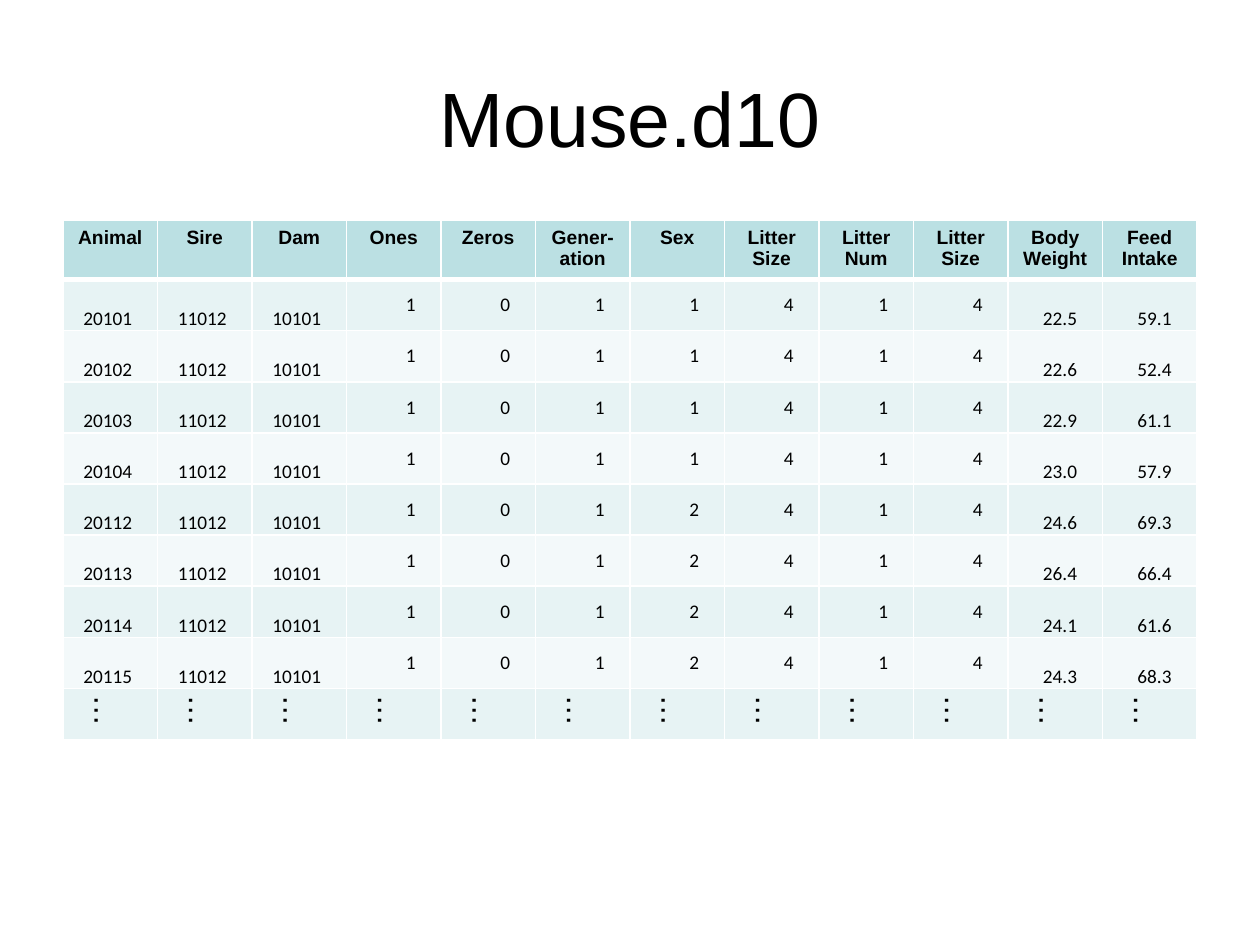
from dataclasses import dataclass

from lxml.etree import SubElement
from pptx import Presentation
from pptx.dml.color import RGBColor
from pptx.enum.text import MSO_ANCHOR, PP_ALIGN
from pptx.oxml.ns import qn
from pptx.util import Cm, Pt

COLORS = {"text": "000000", "header": "BBE0E3", "odd": "E7F3F4",
          "even": "F3F9FA", "border": "FFFFFF"}

HEADERS = ["Animal", "Sire", "Dam", "Ones", "Zeros", "Gener-\nation", "Sex",
           "Litter\nSize", "Litter\nNum", "Litter\nSize", "Body\nWeight", "Feed\nIntake"]
CODE_COLUMNS = range(3, 10)  # single-digit codes, centred vertically


@dataclass
class Mouse:
    animal: str
    sex: str
    weight: str
    intake: str

    def values(self) -> list[str]:
        return [self.animal, "11012", "10101", "1", "0", "1", self.sex,
                "4", "1", "4", self.weight, self.intake]


@dataclass
class TextStyle:
    size: int
    font: str = "Arial"
    bold: bool = False
    align: PP_ALIGN = PP_ALIGN.CENTER


MICE = [
    Mouse("20101", "1", "22.5", "59.1"),
    Mouse("20102", "1", "22.6", "52.4"),
    Mouse("20103", "1", "22.9", "61.1"),
    Mouse("20104", "1", "23.0", "57.9"),
    Mouse("20112", "2", "24.6", "69.3"),
    Mouse("20113", "2", "26.4", "66.4"),
    Mouse("20114", "2", "24.1", "61.6"),
    Mouse("20115", "2", "24.3", "68.3"),
]

TITLE = TextStyle(44)
HEADER = TextStyle(11, bold=True)
DATA = TextStyle(11, "Calibri", align=PP_ALIGN.RIGHT)
ELLIPSIS = TextStyle(18)
DATA_MARGINS = {"margin_left": Cm(0.03), "margin_right": Cm(0.51),
                "margin_top": 0, "margin_bottom": 0}


def write(frame, text: str, style: TextStyle) -> None:
    frame.text = text
    font_format = {"size": Pt(style.size), "name": style.font, "bold": style.bold}
    for paragraph in frame.paragraphs:
        paragraph.alignment = style.align
        for run in paragraph.runs:
            for name, value in font_format.items():
                setattr(run.font, name, value)
            run.font.color.rgb = RGBColor.from_string(COLORS["text"])


def paint(cell, fill: str, top: int = 1, bottom: int = 1) -> None:
    """Give a cell its white borders (points) and its fill."""
    properties = cell._tc.get_or_add_tcPr()
    for side, points in {"L": 1, "R": 1, "T": top, "B": bottom}.items():
        line = SubElement(properties, qn(f"a:ln{side}"), w=str(Pt(points)))
        solid = SubElement(line, qn("a:solidFill"))
        SubElement(solid, qn("a:srgbClr"), val=COLORS["border"])
    cell.fill.solid()
    cell.fill.fore_color.rgb = RGBColor.from_string(COLORS[fill])


def add_title(slide, text: str) -> None:
    title = slide.shapes.add_textbox(Cm(1.27), Cm(0.76), Cm(22.86), Cm(3.18))
    title.text_frame.word_wrap = True
    title.text_frame.vertical_anchor = MSO_ANCHOR.MIDDLE
    write(title.text_frame, text, TITLE)


def add_mouse_table(slide) -> None:
    table = slide.shapes.add_table(len(MICE) + 2, len(HEADERS), Cm(1.27), Cm(4.45),
                                   Cm(22.86), Cm(10.3)).table
    table.first_row = table.horz_banding = False

    # Header row
    for column, heading in enumerate(HEADERS):
        cell = table.cell(0, column)
        write(cell.text_frame, heading, HEADER)
        paint(cell, "header", bottom=3)

    # One row per mouse
    for row, mouse in enumerate(MICE, start=1):
        for column, value in enumerate(mouse.values()):
            cell = table.cell(row, column)
            write(cell.text_frame, value, DATA)
            for name, margin in DATA_MARGINS.items():
                setattr(cell, name, margin)
            cell.vertical_anchor = (MSO_ANCHOR.MIDDLE if column in CODE_COLUMNS
                                    else MSO_ANCHOR.BOTTOM)
            paint(cell, "odd" if row % 2 else "even", top=3 if row == 1 else 1)

    # Turned ellipses: the data go on
    for cell in table.rows[len(MICE) + 1].cells:
        write(cell.text_frame, "…", ELLIPSIS)
        cell.vertical_anchor = MSO_ANCHOR.MIDDLE
        cell._tc.get_or_add_tcPr().set("vert", "vert270")
        paint(cell, "odd")


def main() -> None:
    presentation = Presentation()
    presentation.slide_width, presentation.slide_height = Cm(25.4), Cm(19.05)
    slide = presentation.slides.add_slide(presentation.slide_layouts[6])
    add_title(slide, "Mouse.d10")
    add_mouse_table(slide)
    presentation.save("out.pptx")


if __name__ == "__main__":
    main()
